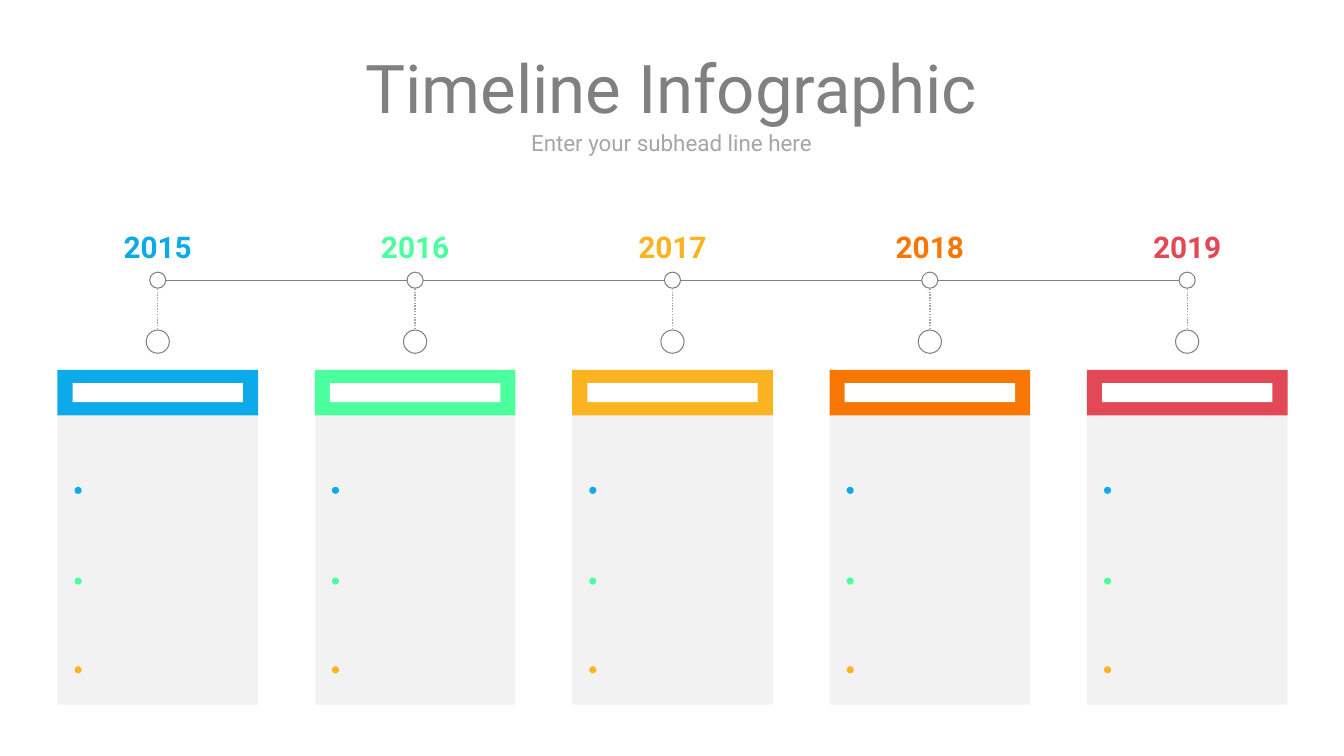
from pptx import Presentation
from pptx.dml.color import RGBColor
from pptx.enum.dml import MSO_LINE
from pptx.enum.shapes import MSO_CONNECTOR, MSO_SHAPE
from pptx.enum.text import MSO_ANCHOR, PP_ALIGN
from pptx.oxml.ns import qn
from pptx.util import Inches, Pt
from lxml import etree

RECT, OVAL = MSO_SHAPE.RECTANGLE, MSO_SHAPE.OVAL
STRAIGHT = MSO_CONNECTOR.STRAIGHT
DOTTED = MSO_LINE.ROUND_DOT
MIDDLE, CENTER = MSO_ANCHOR.MIDDLE, PP_ALIGN.CENTER

FONT = "Roboto"
WHITE = RGBColor(0xFF, 0xFF, 0xFF)
PANEL = RGBColor(0xF2, 0xF2, 0xF2)
GRAY = RGBColor(0x80, 0x80, 0x80)
LIGHT_GRAY = RGBColor(0xA6, 0xA6, 0xA6)
BLUE = RGBColor(0x0C, 0xAA, 0xE9)
GREEN = RGBColor(0x4B, 0xFF, 0x9E)
YELLOW = RGBColor(0xFB, 0xB3, 0x21)
ORANGE = RGBColor(0xF8, 0x76, 0x04)
RED = RGBColor(0xE3, 0x48, 0x57)

YEARS = [("2015", BLUE), ("2016", GREEN), ("2017", YELLOW),
         ("2018", ORANGE), ("2019", RED)]
BULLETS = [(2.62, BLUE), (3.52, GREEN), (4.4, YELLOW)]

FIRST_LEFT, LAST_LEFT = 0.57, 10.78
PITCH = (LAST_LEFT - FIRST_LEFT) / (len(YEARS) - 1)
COLUMN_TOP, COLUMN_WIDTH = 2.21, 1.99
AXIS_Y = 2.78


def add_shape(slide, kind, x, y, w, h, fill, outline=None):
    sp = slide.shapes.add_shape(kind, Inches(x), Inches(y), Inches(w), Inches(h))
    sp.shadow.inherit = False
    sp.fill.solid()
    sp.fill.fore_color.rgb = fill
    if outline is None:
        sp.line.fill.background()
    else:
        sp.line.color.rgb = outline
        sp.line.width = Pt(0.75)
    return sp


def add_circle(slide, cx, cy, size):
    """Place an outlined white circle by its centre."""
    add_shape(slide, OVAL, cx - size / 2, cy - size / 2, size, size, WHITE, GRAY)


def add_line(slide, x1, y1, x2, y2, color, dash=None):
    line = slide.shapes.add_connector(
        STRAIGHT, Inches(x1), Inches(y1), Inches(x2), Inches(y2))
    line.line.color.rgb = color
    line.line.width = Pt(1)
    if dash is not None:
        line.line.dash_style = dash
    etree.SubElement(line._element.spPr, qn("a:effectLst"))


def add_text(slide, x, y, w, h, text, size, color, bold=False, wrap=True,
             spacing=None):
    box = slide.shapes.add_textbox(Inches(x), Inches(y), Inches(w), Inches(h))
    tf = box.text_frame
    tf.word_wrap = wrap
    tf.vertical_anchor = MIDDLE
    tf.margin_left = tf.margin_right = tf.margin_top = tf.margin_bottom = 0
    p = tf.paragraphs[0]
    p.text = text
    p.alignment = CENTER
    p.line_spacing = spacing
    p.font.name = FONT
    p.font.size = Pt(size)
    p.font.bold = bold
    p.font.color.rgb = color


def add_heading(slide, x, y, w):
    add_text(slide, x, y, w, 0.72, "Timeline Infographic", 48, GRAY)
    add_text(slide, x, y + 0.79, w, 0.25, "Enter your subhead line here", 16,
             LIGHT_GRAY, wrap=False)


def add_axis(slide, y):
    first_center = FIRST_LEFT + COLUMN_WIDTH / 2
    last_center = LAST_LEFT + COLUMN_WIDTH / 2
    add_line(slide, first_center, y, last_center, y, GRAY)


def add_year_column(slide, x, y, w, year, color):
    """Draw a year label, its two markers and the card below them."""
    center = x + w / 2
    add_text(slide, center - 0.62, y, 1.24, 0.4, year, 21.3, color, bold=True,
             spacing=1.2)
    add_line(slide, center, y + 0.49, center, y + 1.29, LIGHT_GRAY, DOTTED)
    add_circle(slide, center, AXIS_Y, 0.16)
    add_circle(slide, center, y + 1.18, 0.23)

    add_shape(slide, RECT, x, y + 1.91, w, 2.87, PANEL)
    add_shape(slide, RECT, x, y + 1.46, w, 0.45, color)
    add_shape(slide, RECT, x + 0.15, y + 1.59, w - 0.3, 0.19, WHITE)
    for offset, bullet_color in BULLETS:
        add_shape(slide, OVAL, x + 0.17, y + offset, 0.07, 0.07, bullet_color)


def main():
    prs = Presentation()
    prs.slide_width, prs.slide_height = Inches(13.33), Inches(7.5)
    slide = prs.slides.add_slide(prs.slide_layouts[6])
    add_heading(slide, 0.56, 0.5, 12.2)
    add_axis(slide, AXIS_Y)
    for i, (year, color) in enumerate(YEARS):
        add_year_column(slide, FIRST_LEFT + i * PITCH, COLUMN_TOP, COLUMN_WIDTH,
                        year, color)
    prs.save("out.pptx")


if __name__ == "__main__":
    main()
